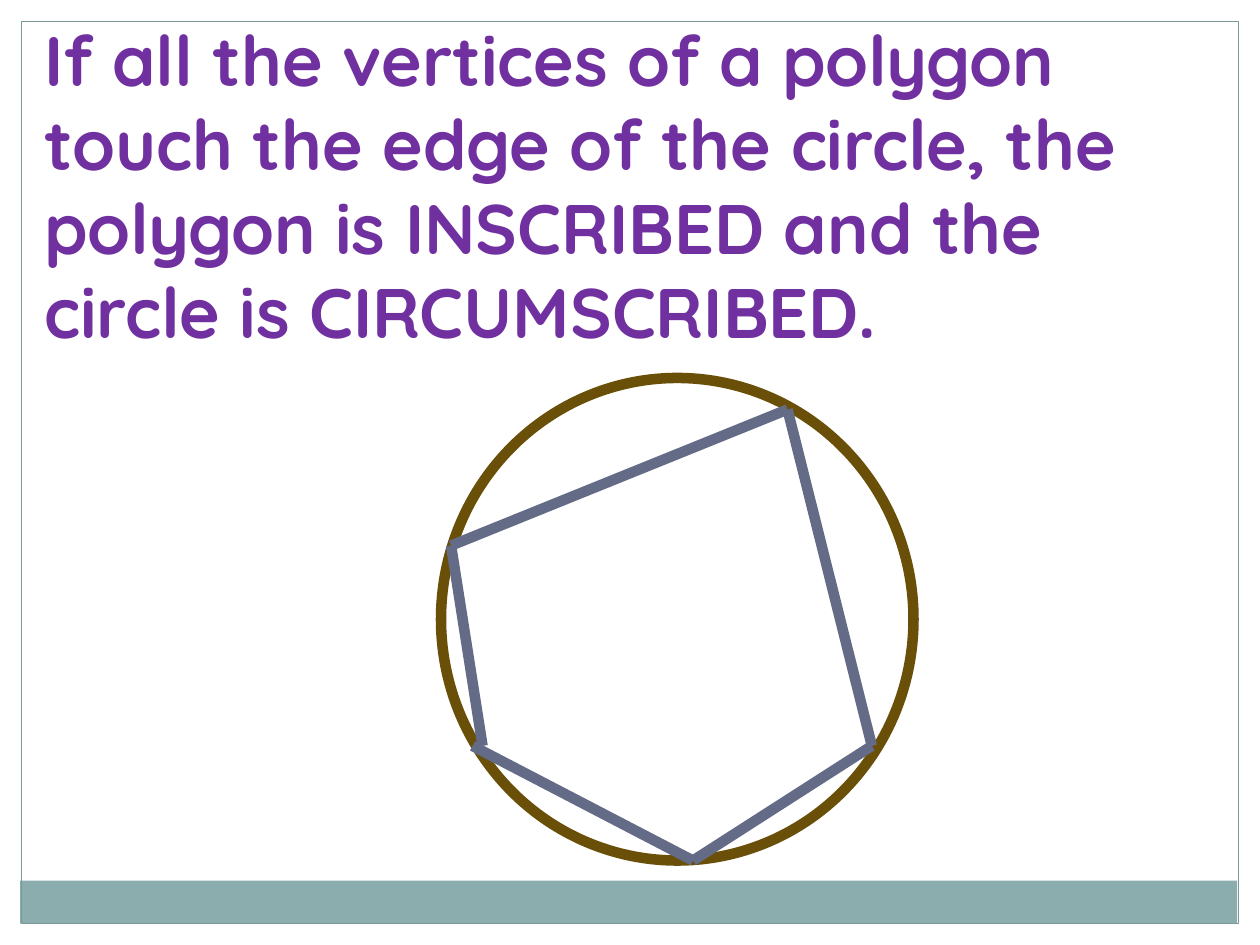
from typing import NamedTuple, Optional

from lxml.etree import SubElement
from pptx import Presentation
from pptx.dml.color import RGBColor
from pptx.enum.shapes import MSO_CONNECTOR, MSO_SHAPE
from pptx.enum.text import MSO_ANCHOR, MSO_AUTO_SIZE, PP_ALIGN
from pptx.oxml.ns import qn
from pptx.util import Inches, Pt

HUES = {"white": "FFFFFF", "band": "8CADAE", "frame": "7C999A",
        "text": "7030A0", "ring": "694F07", "side": "646B86"}


class Block(NamedTuple):
    box: tuple
    kind: MSO_SHAPE = MSO_SHAPE.RECTANGLE
    fill: Optional[str] = None
    line: Optional[str] = None
    width: float = 0.75


class Side(NamedTuple):
    start: tuple
    end: tuple


def hue(name: str) -> RGBColor:
    return RGBColor.from_string(HUES[name])


def draw_block(slide, block: Block) -> None:
    shape = slide.shapes.add_shape(block.kind, *map(Inches, block.box))
    shape.shadow.inherit = False
    if block.fill:
        shape.fill.solid()
        shape.fill.fore_color.rgb = hue(block.fill)
    else:
        shape.fill.background()
    if block.line:
        shape.line.color.rgb = hue(block.line)
        shape.line.width = Pt(block.width)
    else:
        shape.line.fill.background()


def draw_side(slide, side: Side) -> None:
    line = slide.shapes.add_connector(
        MSO_CONNECTOR.STRAIGHT, *map(Inches, side.start + side.end))
    line.line.color.rgb = hue("side")
    line.line.width = Pt(6)
    SubElement(line._element.spPr, qn("a:effectLst"))


def write(shape, text: str, *, size: float, color: str, font: str,
          bold: bool = False, align=PP_ALIGN.LEFT) -> None:
    frame = shape.text_frame
    frame.word_wrap = True
    frame.auto_size = MSO_AUTO_SIZE.SHAPE_TO_FIT_TEXT
    frame.vertical_anchor = MSO_ANCHOR.TOP
    para = frame.paragraphs[0]
    para.alignment = align
    run = para.add_run()
    run.text = text
    run.font.size = Pt(size)
    run.font.name = font
    run.font.bold = bold
    run.font.color.rgb = hue(color)


# Margins, bottom band and page frame
PAGE = [
    Block((0, 0, 10, 0.17), fill="white"),
    Block((9.83, 0, 0.17, 7.5), fill="white"),
    Block((0, 0, 0.17, 7.5), fill="white"),
    Block((0.16, 6.99, 9.66, 0.34), fill="band"),
    Block((0.17, 0.17, 9.66, 7.16), line="frame"),
]
RING = Block((3.5, 3, 3.75, 3.83), MSO_SHAPE.OVAL, "white", "ring", 6)

# Polygon corners; the two sides at lower left end slightly apart
LEFT, TOP, RIGHT, BASE = (3.58, 4.33), (6.25, 3.25), (6.92, 5.92), (5.5, 6.83)
SIDES = [Side(LEFT, TOP), Side(TOP, RIGHT), Side(LEFT, (3.83, 5.92)),
         Side((3.75, 5.92), BASE), Side(BASE, RIGHT)]


def main() -> None:
    deck = Presentation()
    deck.slide_width, deck.slide_height = Inches(10), Inches(7.5)
    slide = deck.slides.add_slide(deck.slide_layouts[5])

    # Statement
    title = slide.shapes.title
    title.left, title.top = Inches(0.25), Inches(0.08)
    title.width, title.height = Inches(9.42), Inches(2.79)
    write(title, "If all the vertices of a polygon touch the edge of the "
          "circle, the polygon is INSCRIBED and the circle is CIRCUMSCRIBED.",
          size=40, color="text", font="Quicksand", bold=True)

    # Page, circle and polygon
    for block in PAGE + [RING]:
        draw_block(slide, block)
    for side in SIDES:
        draw_side(slide, side)

    deck.save("out.pptx")


if __name__ == "__main__":
    main()
